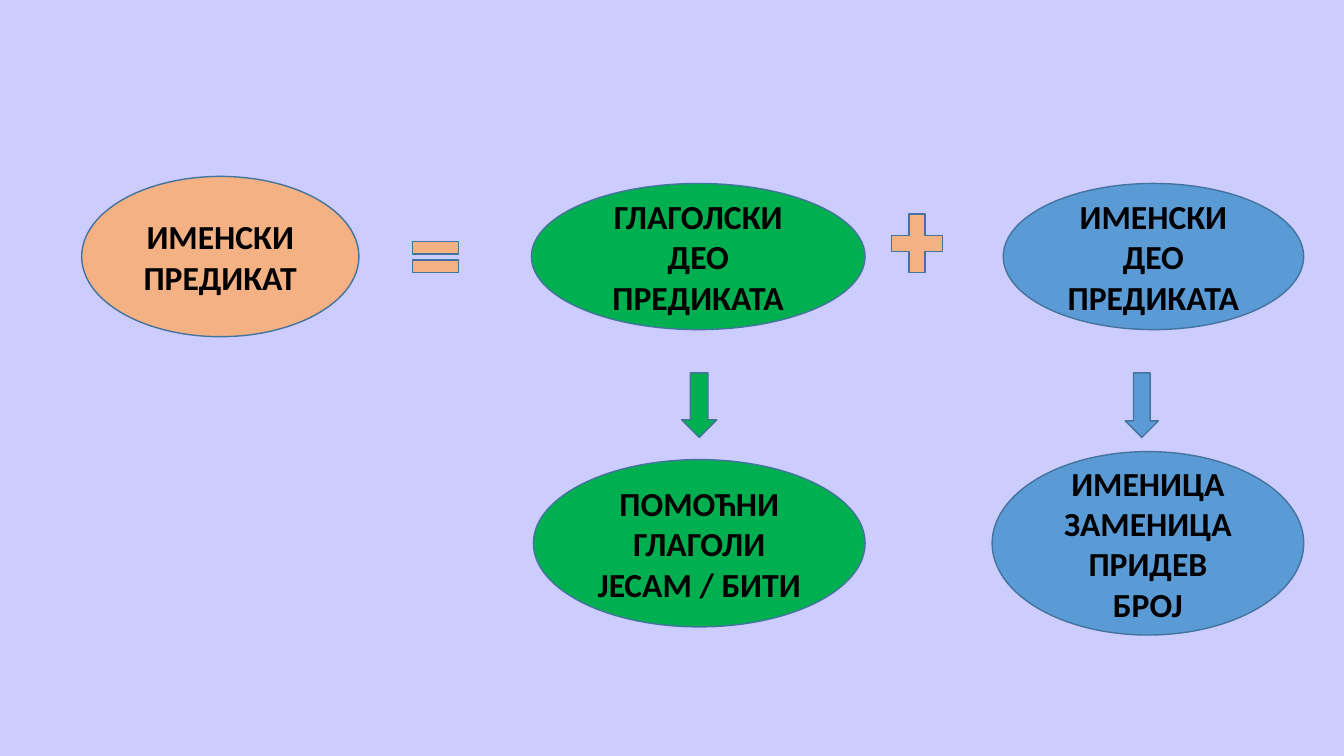
from pptx import Presentation
from pptx.dml.color import RGBColor
from pptx.enum.shapes import MSO_SHAPE
from pptx.enum.text import MSO_ANCHOR, PP_ALIGN
from pptx.util import Inches, Pt

LAVENDER = RGBColor(0xCC, 0xCC, 0xFF)
PEACH = RGBColor(0xF4, 0xB1, 0x83)
GREEN = RGBColor(0x00, 0xB0, 0x50)
BLUE = RGBColor(0x5B, 0x9B, 0xD5)
OUTLINE = RGBColor(0x43, 0x73, 0x9E)
BLACK = RGBColor(0x00, 0x00, 0x00)


def add_figure(slide, kind, box, color):
    sp = slide.shapes.add_shape(kind, *map(Inches, box))
    sp.shadow.inherit = False
    sp.fill.solid()
    sp.fill.fore_color.rgb = color
    sp.line.color.rgb = OUTLINE
    sp.line.width = Pt(1)
    return sp


def write_text(sp, text, size=24, bold=True, color=BLACK, font="Calibri"):
    tf = sp.text_frame
    tf.word_wrap = True
    tf.vertical_anchor = MSO_ANCHOR.MIDDLE
    tf.text = text
    for p in tf.paragraphs:
        p.alignment = PP_ALIGN.CENTER
        for r in p.runs:
            r.font.size = Pt(size)
            r.font.bold = bold
            r.font.name = font
            r.font.color.rgb = color


def add_bubble(slide, box, color, text, kind=MSO_SHAPE.OVAL):
    write_text(add_figure(slide, kind, box, color), text)


def main():
    """Build the slide on the parts of the nominal predicate."""
    prs = Presentation()
    prs.slide_width = Inches(13.33)
    prs.slide_height = Inches(7.5)
    slide = prs.slides.add_slide(prs.slide_layouts[6])
    slide.background.fill.solid()
    slide.background.fill.fore_color.rgb = LAVENDER

    add_bubble(slide, (0.81, 1.75, 2.75, 1.59), PEACH, "ИМЕНСКИ ПРЕДИКАТ",
               kind=MSO_SHAPE.FLOWCHART_CONNECTOR)
    add_figure(slide, MSO_SHAPE.MATH_EQUAL, (4.01, 2.29, 0.62, 0.52), PEACH)
    add_bubble(slide, (5.27, 1.82, 3.31, 1.45), GREEN, "ГЛАГОЛСКИ\nДЕО\nПРЕДИКАТА")
    add_figure(slide, MSO_SHAPE.MATH_PLUS, (8.75, 2.02, 0.69, 0.79), PEACH)
    add_bubble(slide, (9.95, 1.82, 2.98, 1.45), BLUE, "ИМЕНСКИ\nДЕО\nПРЕДИКАТА")

    add_figure(slide, MSO_SHAPE.DOWN_ARROW, (6.76, 3.7, 0.35, 0.64), GREEN)
    add_bubble(slide, (5.29, 4.56, 3.29, 1.66), GREEN, "ПОМОЋНИ\nГЛАГОЛИ\nЈЕСАМ / БИТИ")
    add_figure(slide, MSO_SHAPE.DOWN_ARROW, (11.16, 3.7, 0.33, 0.64), BLUE)
    add_bubble(slide, (9.84, 4.48, 3.09, 1.82), BLUE, "ИМЕНИЦА\nЗАМЕНИЦА\nПРИДЕВ\nБРОЈ")

    prs.save("out.pptx")


if __name__ == "__main__":
    main()
